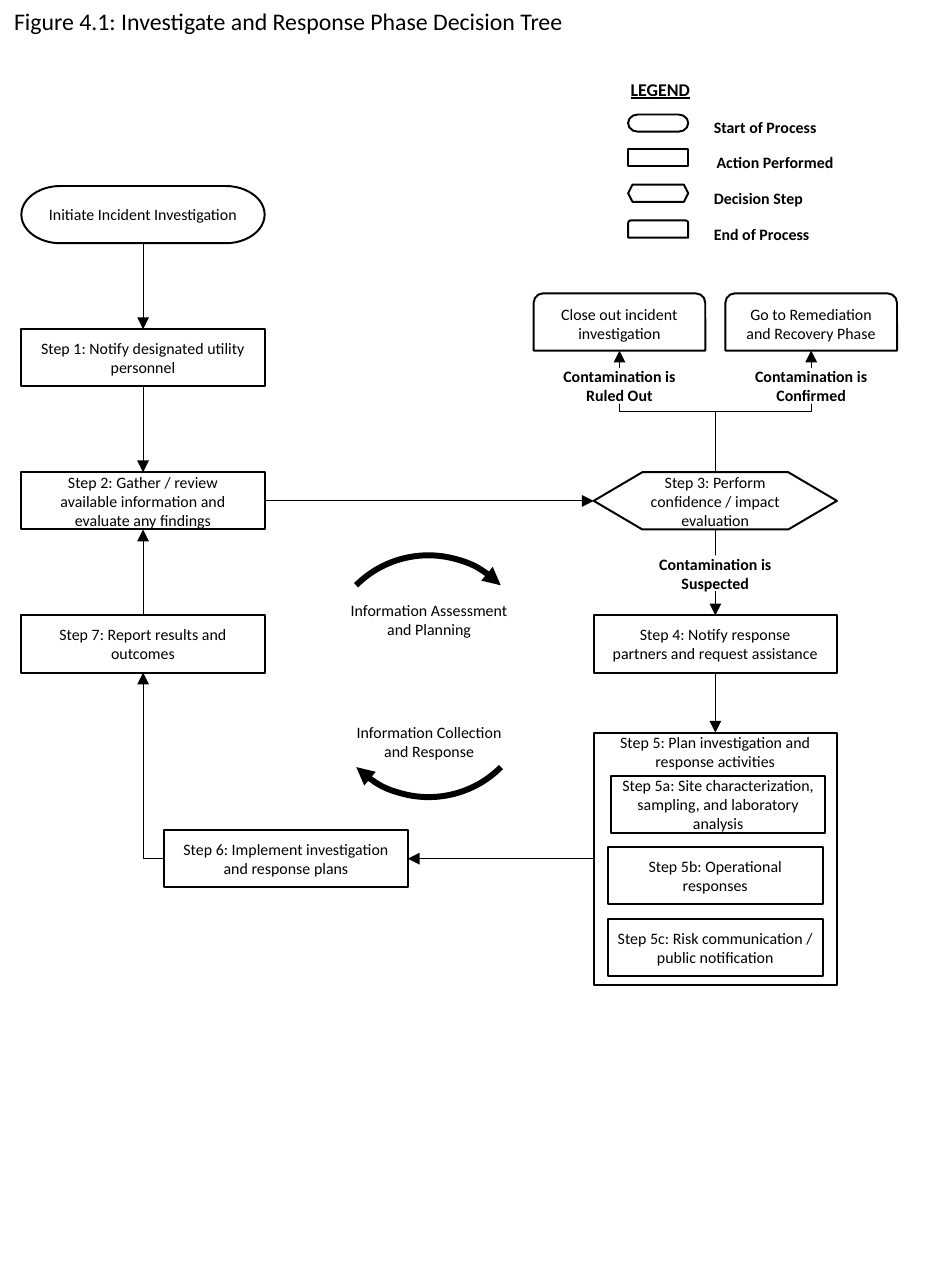
from lxml.etree import SubElement
from pptx import Presentation
from pptx.dml.color import RGBColor
from pptx.enum.shapes import MSO_CONNECTOR as Link, MSO_SHAPE as Shape
from pptx.enum.text import MSO_ANCHOR as Anchor, MSO_AUTO_SIZE as Fit, PP_ALIGN as Align
from pptx.oxml.ns import qn
from pptx.util import Pt

PX = 9144
BLACK = RGBColor(0, 0, 0)
WHITE = RGBColor(255, 255, 255)
STEP = Shape.FLOWCHART_PROCESS
START = Shape.FLOWCHART_TERMINATOR
CHOICE = Shape.FLOWCHART_PREPARATION
END = Shape.ROUND_2_SAME_RECTANGLE
RECT = Shape.RECTANGLE
TOP, LEFT, BOTTOM, RIGHT = range(4)


def px(*nums):
    return [num * PX for num in nums]


def write(shape, text, size=8, bold=False, under=False, align=Align.CENTER,
          pad=(10, 5), anchor=Anchor.TOP, grow=False):
    frame = shape.text_frame
    frame.word_wrap = True
    frame.vertical_anchor = anchor
    frame.margin_left = frame.margin_right = pad[0] * PX
    frame.margin_top = frame.margin_bottom = pad[1] * PX
    if grow:
        frame.auto_size = Fit.SHAPE_TO_FIT_TEXT
    para = frame.paragraphs[0]
    para.alignment = align
    run = para.add_run()
    run.text = text
    font = run.font
    font.name, font.size, font.bold, font.underline = "Calibri", Pt(size), bold, under
    font.color.rgb = BLACK


def add_text(slide, spot, text, **style):
    write(slide.shapes.add_textbox(*px(*spot)), text, grow=True, **style)


def add_box(slide, kind, spot, text="", pad=12, anchor=Anchor.MIDDLE):
    box = slide.shapes.add_shape(kind, *px(*spot))
    box.shadow.inherit = False
    box.fill.solid()
    box.fill.fore_color.rgb = WHITE
    box.line.color.rgb = BLACK
    box.line.width = Pt(1)
    if text:
        write(box, text, pad=(pad, 0), anchor=anchor)
    return box


def add_label(slide, spot, text):
    label = slide.shapes.add_shape(RECT, *px(*spot))
    label.shadow.inherit = False
    label.fill.solid()
    label.fill.fore_color.rgb = WHITE
    label.line.fill.background()
    write(label, text, bold=True, pad=(7, 3), anchor=Anchor.MIDDLE, grow=True)


def add_head(shape, width):
    shape.line.color.rgb = BLACK
    shape.line.width = Pt(width)
    line = shape.element.spPr.find(qn("a:ln"))
    SubElement(line, qn("a:tailEnd"), type="triangle")


def add_link(slide, kind, ends=(0, 0, 0, 0)):
    link = slide.shapes.add_connector(kind, *px(*ends))
    add_head(link, 0.5)
    SubElement(link.element.spPr, qn("a:effectLst"))
    return link


def join(slide, first, out, last, into):
    link = add_link(slide, Link.STRAIGHT)
    link.begin_connect(first, out)
    link.end_connect(last, into)


def add_bend(slide, ends, turn, bends=3):
    props = add_link(slide, Link.ELBOW, ends).element.spPr
    props.find(qn("a:xfrm")).set("rot", str(turn * 60000))
    props.find(qn("a:prstGeom")).set("prst", f"bentConnector{bends}")


def add_arc(slide, top, turn):
    arc = slide.shapes.add_shape(Shape.ARC, *px(228, top, 143, 143))
    arc.shadow.inherit = False
    arc.fill.background()
    arc.rotation = turn
    add_head(arc, 3)


def add_legend(slide):
    add_text(slide, (431, 50, 103, 25), "LEGEND", size=9, bold=True, under=True, align=Align.LEFT)
    rows = [
        (START, 489, "Start of Process"),
        (RECT, 491, "Action Performed"),
        (Shape.HEXAGON, 489, "Decision Step"),
        (END, 489, "End of Process"),
    ]
    for row, (kind, left, text) in enumerate(rows):
        top = 80 + row * 74 // 3
        add_box(slide, kind, (439, top, 42, 12))
        add_text(slide, (left, 77 + 25 * row, 128, 24), text, bold=True, align=Align.LEFT)


def add_flow(slide):
    start = add_box(slide, START, (15, 130, 170, 40), "Initiate Incident Investigation", 7)
    notify, review, report = [
        add_box(slide, STEP, (15, top, 170, 40), text)
        for top, text in [
            (230, "Step 1: Notify designated utility personnel"),
            (330, "Step 2: Gather / review available information and evaluate any findings"),
            (430, "Step 7: Report results and outcomes"),
        ]
    ]
    judge = add_box(slide, CHOICE, (415, 330, 170, 40),
                    "Step 3: Perform confidence / impact evaluation", 0)
    assist = add_box(slide, STEP, (415, 430, 170, 40),
                     "Step 4: Notify response partners and request assistance")
    plan = add_box(slide, STEP, (415, 512, 170, 176),
                   "Step 5: Plan investigation and response activities", anchor=Anchor.TOP)
    act = add_box(slide, STEP, (115, 580, 170, 40),
                  "Step 6: Implement investigation and response plans")
    parts = [
        (427, "Step 5a: Site characterization, sampling, and laboratory analysis"),
        (425, "Step 5b: Operational responses"),
        (425, "Step 5c: Risk communication / public notification"),
    ]
    for row, (left, text) in enumerate(parts):
        add_box(slide, RECT, (left, 542 + 50 * row, 150, 40), text, 6)

    for link in [
        (start, BOTTOM, notify, TOP),
        (notify, BOTTOM, review, TOP),
        (review, RIGHT, judge, LEFT),
        (judge, BOTTOM, assist, TOP),
        (assist, BOTTOM, plan, TOP),
        (plan, LEFT, act, RIGHT),
        (report, TOP, review, BOTTOM),
    ]:
        join(slide, *link)
    add_bend(slide, (100, 470, 115, 600), 180, 2)
    add_label(slide, (440, 388, 120, 25), "Contamination is Suspected")


def add_ends(slide):
    for left, text, state, ends, turn in [
        (373, "Close out incident investigation", "Ruled Out", (424, 321, 509, 254), 270),
        (507, "Go to Remediation and Recovery Phase", "Confirmed", (576, 321, 491, 254), 90),
    ]:
        add_box(slide, END, (left, 205, 120, 40), text, 7)
        add_bend(slide, ends, turn)
        add_label(slide, (left, 257, 120, 25), f"Contamination is {state}")


def add_cycle(slide):
    for top, turn, low, text in [
        (388, 315, 420, "Information Assessment and Planning"),
        (414, 135, 505, "Information Collection and Response"),
    ]:
        add_arc(slide, top, turn)
        add_text(slide, (235, low, 130, 27), text, pad=(10, 0))


def main():
    deck = Presentation()
    deck.slide_width, deck.slide_height = px(650, 900)
    slide = deck.slides.add_slide(deck.slide_layouts[6])
    add_text(slide, (0, 0, 650, 30), "Figure 4.1: Investigate and Response Phase Decision Tree",
             size=12, align=Align.LEFT)
    add_legend(slide)
    add_flow(slide)
    add_ends(slide)
    add_cycle(slide)
    deck.save("out.pptx")


if __name__ == "__main__":
    main()
